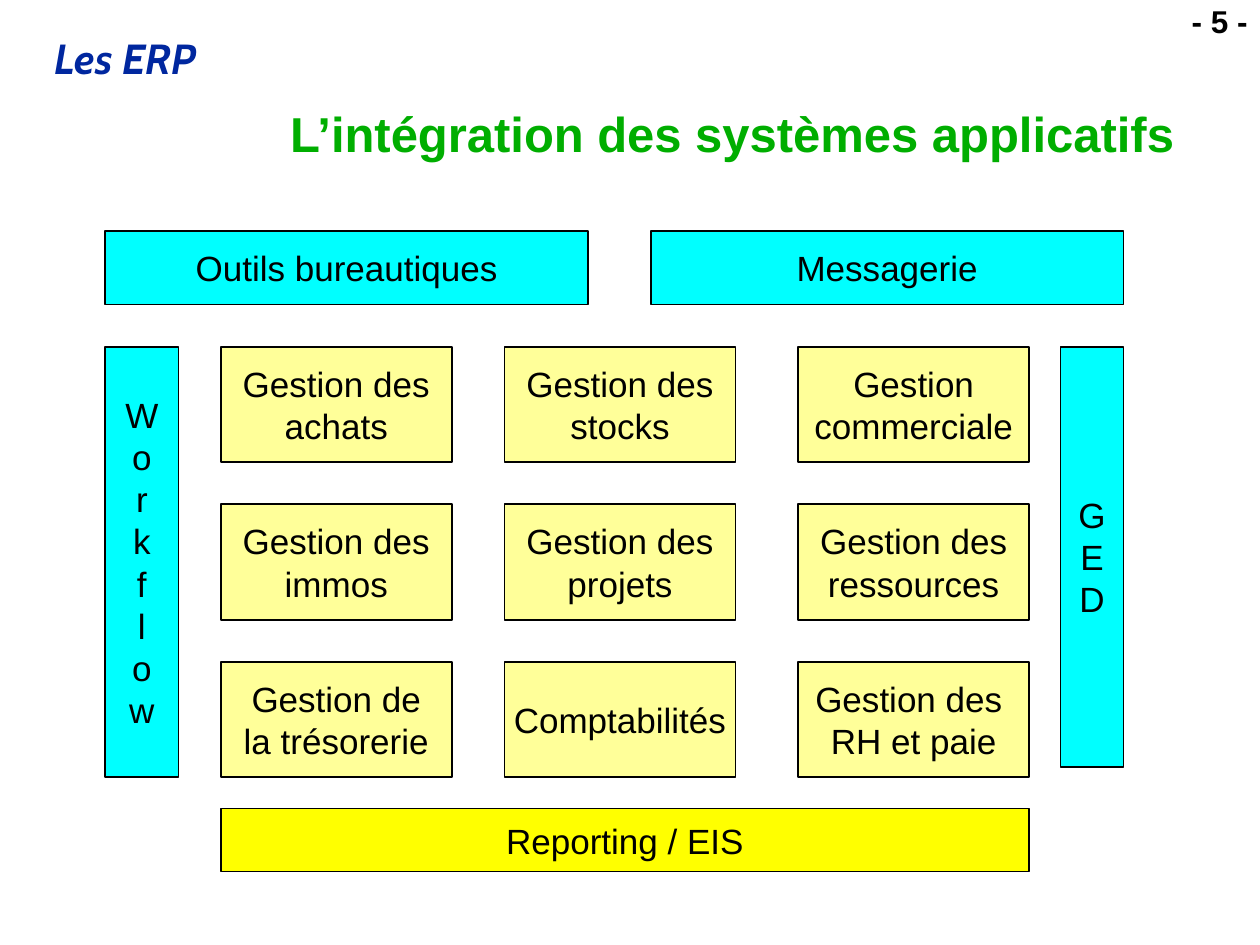
from pptx import Presentation
from pptx import util as u
from pptx.dml import color
from pptx.enum import shapes, text

HUES = {"navy": "00279F", "green": "00AE00", "black": "000000",
        "cyan": "00FFFF", "yellow": "FFFF00", "cream": "FFFF99"}
CELLS = [
    ["Gestion des\nachats", "Gestion des\nstocks", "Gestion\ncommerciale"],
    ["Gestion des\nimmos", "Gestion des\nprojets", "Gestion des\nressources"],
    ["Gestion de\nla trésorerie", "Comptabilités", "Gestion des \nRH et paie"],
]


def rgb(name):
    """Return the named colour."""
    return color.RGBColor.from_string(HUES[name])


def write(frame, words, size, hue, align, face="Arial", bold=False, slant=False, lead=None):
    """Fill a text frame and format its runs."""
    frame.text = words
    for para in frame.paragraphs:
        para.alignment = align
        para.line_spacing = lead
        for run in para.runs:
            font = run.font
            font.name, font.size = face, u.Pt(size)
            font.bold, font.italic = bold, slant
            font.color.rgb = rgb(hue)


def place(shape, box):
    """Move a shape to a box given in centimetres."""
    shape.left, shape.top, shape.width, shape.height = map(u.Cm, box)


def block(slide, box, words, hue):
    """Draw one outlined block with centred text."""
    shape = slide.shapes.add_shape(shapes.MSO_SHAPE.RECTANGLE, *map(u.Cm, box))
    shape.shadow.inherit = False
    shape.fill.solid()
    shape.fill.fore_color.rgb = rgb(hue)
    shape.line.color.rgb = rgb("black")
    shape.line.width = u.Pt(1)
    frame = shape.text_frame
    frame.word_wrap = False
    frame.vertical_anchor = text.MSO_ANCHOR.MIDDLE
    write(frame, words, 20, "black", text.PP_ALIGN.CENTER)


def label(slide, box, words, **style):
    """Add a wrapped text label."""
    frame = slide.shapes.add_textbox(*map(u.Cm, box)).text_frame
    frame.word_wrap = True
    write(frame, words, bold=True, lead=0.9, **style)


def header(slide, box):
    """Set the course name, page number and title."""
    left, top, width, _ = box
    label(slide, (left + 0.85, top + 0.64, 20.52, 1.17), "Les ERP", size=24,
          hue="navy", align=text.PP_ALIGN.LEFT, face="Cabin", slant=True)
    label(slide, (left + width - 2.32, top, 2.32, 0.93), " - 5 -", size=18,
          hue="black", align=text.PP_ALIGN.RIGHT)
    title = slide.shapes.title
    place(title, (left + 3.81, top + 2.12, 20.11, 1.27))
    frame = title.text_frame
    frame.vertical_anchor = text.MSO_ANCHOR.MIDDLE
    frame.auto_size = text.MSO_AUTO_SIZE.NONE
    write(frame, "L’intégration des systèmes applicatifs", 28, "green",
          text.PP_ALIGN.RIGHT, bold=True, lead=0.9)


def grid(slide, box):
    """Lay out the management modules in rows and columns."""
    left, top, width, height = box
    wide, high = 4.66, 2.33
    step = (height - high) / (len(CELLS) - 1)
    cols = (0, 5.72, width - wide)
    for row, names in enumerate(CELLS):
        for col, name in zip(cols, names):
            block(slide, (left + col, top + row * step, wide, high), name, "cream")


def diagram(slide, box):
    """Frame the module grid with the shared tools."""
    left, top, width, _ = box
    mid = top + 2.33
    inner, span = left + 2.33, 16.3
    block(slide, (left, top, 9.74, 1.48), "Outils bureautiques", "cyan")
    block(slide, (left + width - 9.53, top, 9.53, 1.48), "Messagerie", "cyan")
    block(slide, (left, mid, 1.48, 8.68), "\n".join("Workflow"), "cyan")
    block(slide, (left + width - 1.27, mid, 1.27, 8.47), "\n".join("GED"), "cyan")
    block(slide, (inner, top + 11.64, span, 1.27), "Reporting / EIS", "yellow")
    grid(slide, (inner, mid, span, 8.68))


def main():
    """Build and save the slide."""
    deck = Presentation()
    deck.slide_width, deck.slide_height = u.Cm(25.4), u.Cm(19.05)
    slide = deck.slides.add_slide(deck.slide_layouts[5])
    header(slide, (0, 0, 25.4, 3.39))
    diagram(slide, (2.12, 4.66, 20.53, 12.91))
    deck.save("out.pptx")


if __name__ == "__main__":
    main()
